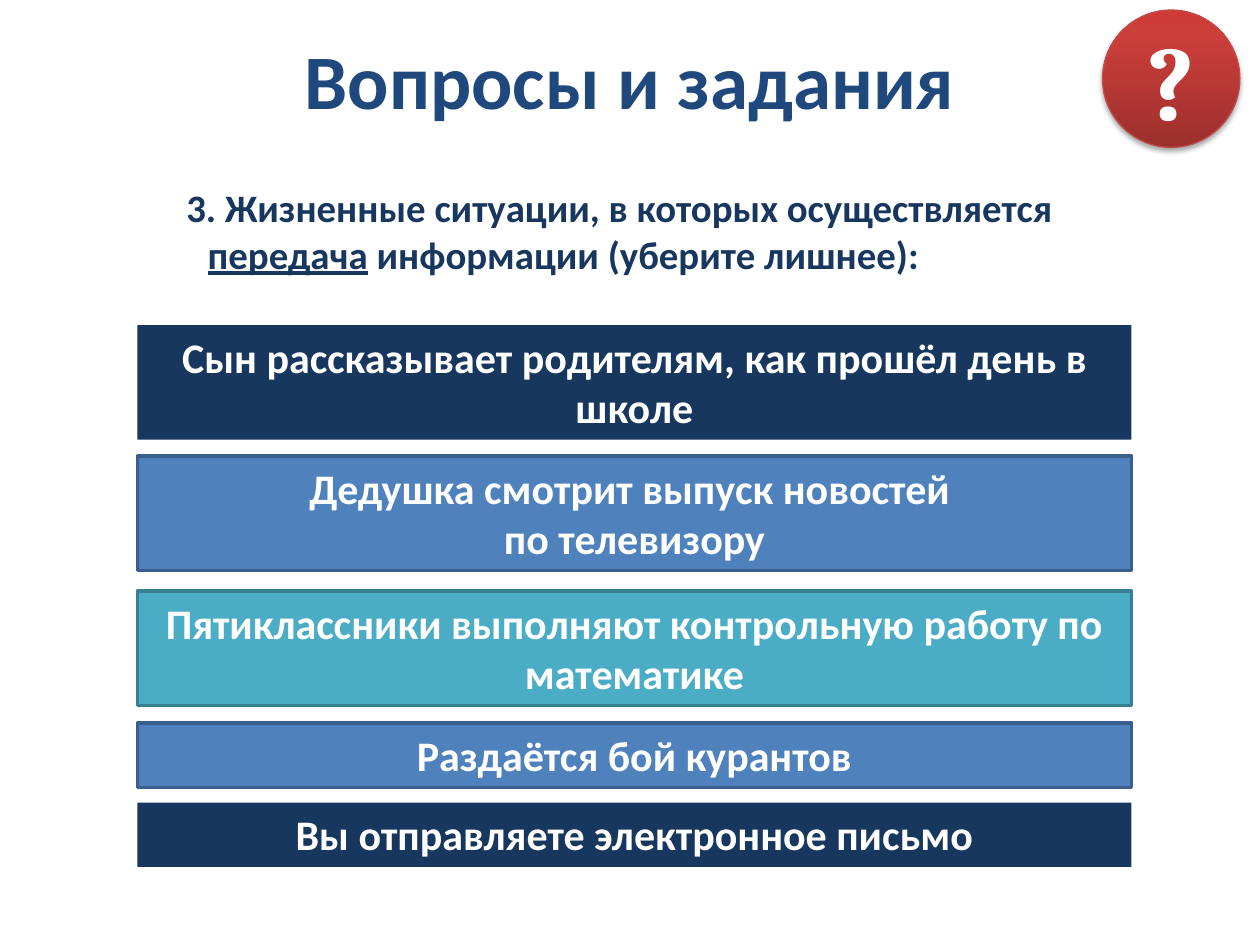
from copy import deepcopy
from dataclasses import dataclass

from lxml.etree import SubElement
from pptx import Presentation
from pptx.dml.color import RGBColor
from pptx.enum.shapes import MSO_SHAPE
from pptx.enum.text import MSO_ANCHOR, MSO_AUTO_SIZE, PP_ALIGN
from pptx.oxml.ns import qn
from pptx.util import Inches, Pt


@dataclass(frozen=True)
class Theme:
    font: str = "Calibri"
    badge_font: str = "Cambria"
    title: str = "1F497D"
    navy: str = "17375E"
    blue: str = "4F81BD"
    blue_edge: str = "3A5F8C"
    teal: str = "4BACC6"
    teal_edge: str = "377F92"
    white: str = "FFFFFF"
    badge_edge: str = "BF4C48"
    badge_stops: tuple = ((0, "9C2F2D"), (0.8, "CB3E3A"), (1, "CE3B37"))
    title_size: float = 44
    question_size: float = 22.2
    answer_size: float = 24
    badge_size: float = 60


class SlideBuilder:
    def __init__(self, slide, theme):
        self.slide = slide
        self.theme = theme

    def style(self, p, size, color, align=PP_ALIGN.CENTER, font=None):
        p.alignment = align
        p.font.name = font or self.theme.font
        p.font.size = Pt(size)
        p.font.bold = True
        p.font.color.rgb = RGBColor.from_string(color)

    def shape(self, kind, left, top, width, height):
        sp = self.slide.shapes.add_shape(
            kind, Inches(left), Inches(top), Inches(width), Inches(height))
        sp.shadow.inherit = False
        return sp

    def title(self, text):
        sp = self.slide.shapes.title
        sp.left, sp.top = Inches(0.5), Inches(0)
        sp.width, sp.height = Inches(9), Inches(1.25)
        tf = sp.text_frame
        tf.vertical_anchor = MSO_ANCHOR.MIDDLE
        tf.text = text
        self.style(tf.paragraphs[0], self.theme.title_size, self.theme.title)

    def question(self, before, underlined, after):
        sp = self.slide.shapes.add_textbox(
            Inches(1.17), Inches(1.41), Inches(8.45), Inches(0.7))
        tf = sp.text_frame
        tf.word_wrap = True
        p = tf.paragraphs[0]
        pPr = p._p.get_or_add_pPr()
        pPr.set("marL", str(Inches(0.38)))
        pPr.set("indent", str(Inches(-0.17)))
        for text in (before, underlined, after):
            r = p.add_run()
            r.text = text
            if text == underlined:
                r.font.underline = True
        self.style(p, self.theme.question_size, self.theme.navy, PP_ALIGN.LEFT)

    def badge(self, text):
        sp = self.shape(MSO_SHAPE.OVAL, 8.75, 0.08, 1.09, 1.09)
        sp.line.color.rgb = RGBColor.from_string(self.theme.badge_edge)
        sp.line.width = Pt(0.75)

        # Three-stop gradient, running from bottom to top
        sp.fill.gradient()
        sp.fill.gradient_angle = 90
        stops = sp._element.spPr.find(".//" + qn("a:gsLst"))
        stops.append(deepcopy(stops[0]))
        for stop, (position, color) in zip(sp.fill.gradient_stops, self.theme.badge_stops):
            stop.position = position
            stop.color.rgb = RGBColor.from_string(color)

        # Soft shadow below
        effects = sp._element.spPr.find(qn("a:effectLst"))
        shadow = SubElement(effects, qn("a:outerShdw"), blurRad=str(Pt(3.1)),
                            dist=str(Pt(1.8)), dir="5400000", rotWithShape="0")
        color = SubElement(shadow, qn("a:srgbClr"), val="000000")
        SubElement(color, qn("a:alpha"), val="35000")

        tf = sp.text_frame
        tf.vertical_anchor = MSO_ANCHOR.MIDDLE
        tf.text = text
        self.style(tf.paragraphs[0], self.theme.badge_size, self.theme.white,
                   font=self.theme.badge_font)

    def answer(self, text, top, height, fill, edge=None):
        sp = self.shape(MSO_SHAPE.RECTANGLE, 1.09, top, 7.89, height)
        sp.fill.solid()
        sp.fill.fore_color.rgb = RGBColor.from_string(fill)
        if edge:
            sp.line.color.rgb = RGBColor.from_string(edge)
            sp.line.width = Pt(2)
        else:
            sp.line.fill.background()
        tf = sp.text_frame
        tf.word_wrap = True
        tf.auto_size = MSO_AUTO_SIZE.SHAPE_TO_FIT_TEXT
        tf.vertical_anchor = MSO_ANCHOR.TOP
        p = tf.paragraphs[0]
        p.text = text
        self.style(p, self.theme.answer_size, self.theme.white)


def main():
    prs = Presentation()
    prs.slide_width, prs.slide_height = Inches(10), Inches(7.5)
    theme = Theme()
    builder = SlideBuilder(prs.slides.add_slide(prs.slide_layouts[5]), theme)

    # Heading and question
    builder.title("Вопросы и задания")
    builder.question("3. Жизненные ситуации, в которых осуществляется ",
                     "передача", " информации (уберите лишнее):")
    builder.badge("?")

    # Answer bars: one or two lines high
    one_line, two_lines = 0.51, 0.91
    navy = (theme.navy,)
    blue = (theme.blue, theme.blue_edge)
    teal = (theme.teal, theme.teal_edge)
    answers = (
        ("Сын рассказывает родителям, как прошёл день в школе", 2.58, two_lines, navy),
        ("Дедушка смотрит выпуск новостей \vпо телевизору", 3.62, two_lines, blue),
        ("Пятиклассники выполняют контрольную работу по математике", 4.69, two_lines, teal),
        ("Раздаётся бой курантов", 5.74, one_line, blue),
        ("Вы отправляете электронное письмо", 6.37, one_line, navy),
    )
    for text, top, height, colors in answers:
        builder.answer(text, top, height, *colors)

    prs.save("out.pptx")


if __name__ == "__main__":
    main()
